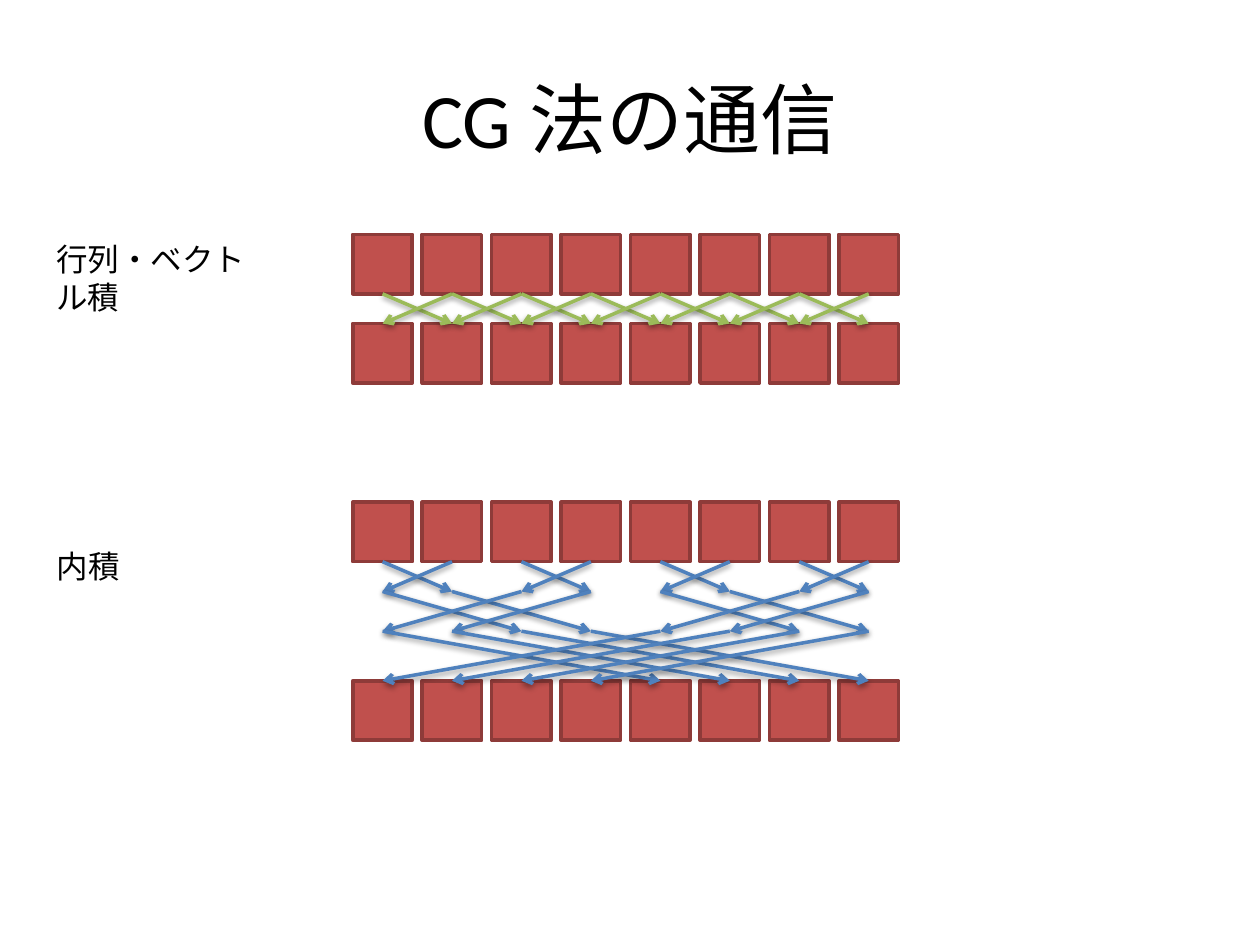
import pptx
import pptx.util
import pptx.oxml
import pptx.dml.color
import pptx.enum.text
import pptx.enum.shapes

hues = {"text": "000000", "box": "C0504D", "edge": "8E3B39",
        "near": "9BBB59", "sum": "4F81BD", "shade": "000000"}
deck = pptx.Presentation()
deck.slide_width = pptx.util.Inches(10)
deck.slide_height = pptx.util.Inches(7.5)
wide, high = deck.slide_width, deck.slide_height
slide = deck.slides.add_slide(deck.slide_layouts[6])

unit = pptx.util.Cm(0.2)
left, top = pptx.util.Inches(2.8), pptx.util.Inches(1.86)
side, pitch, count = 6, 7, 8
space = 'xmlns:a="http://schemas.openxmlformats.org/drawingml/2006/main"'
head = f'<a:tailEnd {space} type="arrow"/>'
shade = (f'<a:effectLst {space}><a:outerShdw blurRad="40000" dist="20000" '
         f'dir="5400000" rotWithShape="0"><a:srgbClr val="{hues["shade"]}">'
         '<a:alpha val="38000"/></a:srgbClr></a:outerShdw></a:effectLst>')


def tint(name):
    return pptx.dml.color.RGBColor.from_string(hues[name])


def arrow(start, end, upper, lower, hue):
    ends = [left + (col * pitch + side / 2) * unit for col in (start, end)]
    line = slide.shapes.add_connector(
        pptx.enum.shapes.MSO_CONNECTOR.STRAIGHT,
        int(ends[0]), top + upper * unit, int(ends[1]), top + lower * unit)
    line.line.color.rgb = tint(hue)
    line.line.width = pptx.util.Pt(2)
    line.line._get_or_add_ln().append(pptx.oxml.parse_xml(head))
    line._element.spPr.append(pptx.oxml.parse_xml(shade))


align, anchor = pptx.enum.text.PP_ALIGN, pptx.enum.text.MSO_ANCHOR
labels = [
    ("CG 法の通信", (0.05, 0.04, 0.9, 0.17), 44, align.CENTER, anchor.MIDDLE),
    ("行列・ベクトル積", (0.035, 0.248, 0.194, 0.053), 18, align.LEFT, anchor.TOP),
    ("内積", (0.035, 0.572, 0.071, 0.053), 18, align.LEFT, anchor.TOP),
]
for words, share, size, flow, hold in labels:
    spot = [int(part * full) for part, full in zip(share, (wide, high) * 2)]
    frame = slide.shapes.add_textbox(*spot).text_frame
    for key, value in {"word_wrap": True, "vertical_anchor": hold}.items():
        setattr(frame, key, value)
    para = frame.paragraphs[0]
    para.alignment = flow
    run = para.add_run()
    run.text = words
    looks = {"name": "Calibri", "size": pptx.util.Pt(size)}
    for key, value in looks.items():
        setattr(run.font, key, value)
    run.font.color.rgb = tint("text")

for row in (0, 9, 27, 45):
    for col in range(count):
        box = slide.shapes.add_shape(
            pptx.enum.shapes.MSO_SHAPE.RECTANGLE,
            left + col * pitch * unit, top + row * unit, side * unit, side * unit)
        box.shadow.inherit = False
        box.fill.solid()
        box.fill.fore_color.rgb = tint("box")
        box.line.color.rgb = tint("edge")
        box.line.width = pptx.util.Pt(2)

for col in range(count - 1):
    arrow(col, col + 1, 6, 9, "near")
    arrow(col + 1, col, 6, 9, "near")

for step, upper, lower in ((1, 33, 36), (2, 36, 40), (4, 40, 45)):
    for col in range(count):
        arrow(col, col ^ step, upper, lower, "sum")

deck.save("out.pptx")
